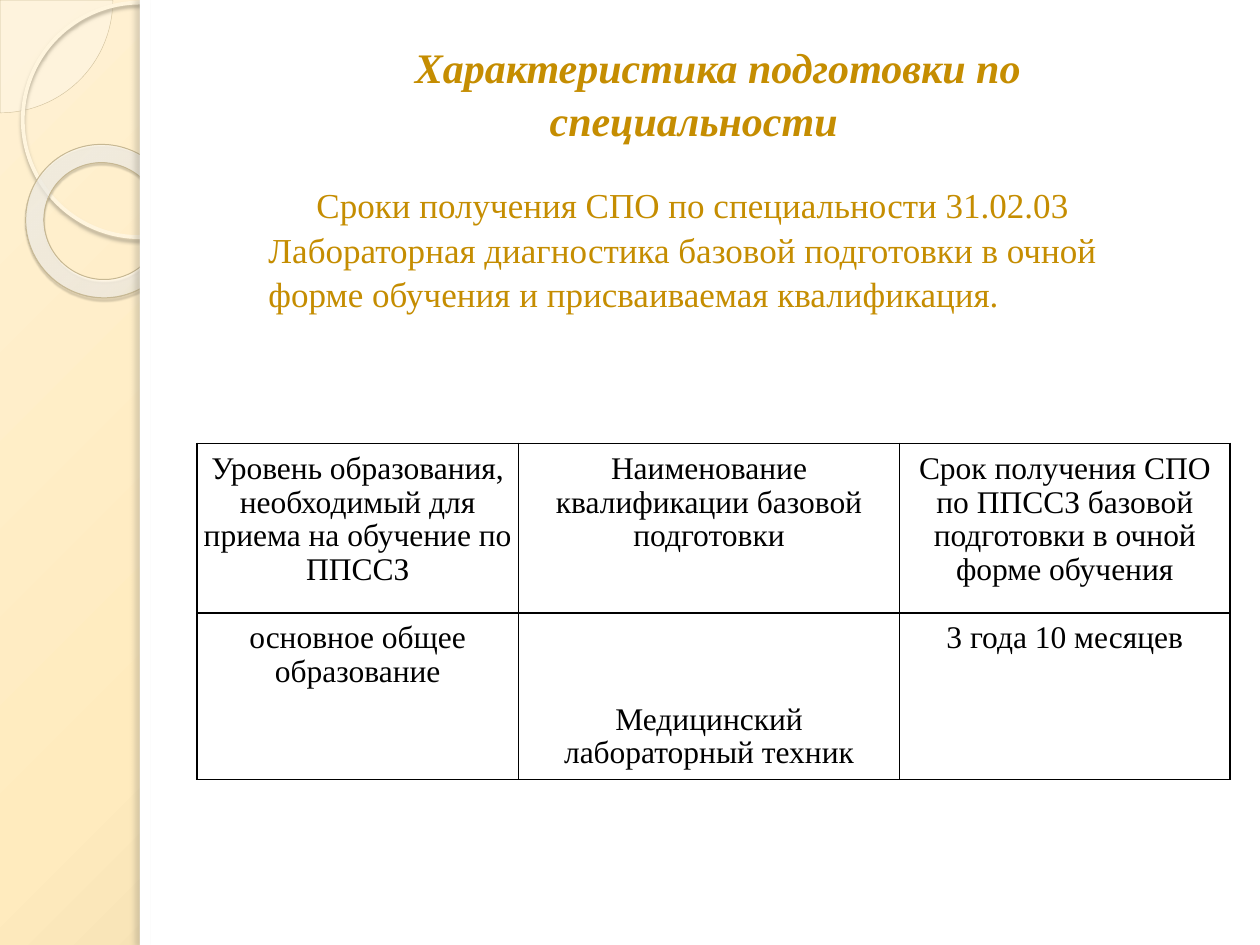
from dataclasses import dataclass
from typing import Optional

from lxml import etree
from pptx import Presentation
from pptx.dml.color import RGBColor
from pptx.enum.shapes import MSO_SHAPE
from pptx.enum.text import MSO_ANCHOR, MSO_AUTO_SIZE, PP_ALIGN
from pptx.oxml import parse_xml
from pptx.oxml.ns import nsdecls, qn
from pptx.util import Pt

TOP, BOTTOM = MSO_ANCHOR.TOP, MSO_ANCHOR.BOTTOM
LEFT, CENTER = PP_ALIGN.LEFT, PP_ALIGN.CENTER


@dataclass(frozen=True)
class Theme:
    font: str = "Times New Roman"
    accent: str = "C58D01"
    ink: str = "000000"
    paper: str = "FFFFFF"
    title_size: int = 24
    body_size: int = 20
    table_size: int = 18


@dataclass(frozen=True)
class Gradient:
    """Circular gradient: stops are (position, colour, opacity) in percent."""
    stops: tuple
    focus: tuple


@dataclass(frozen=True)
class Shadow:
    color: str
    opacity: int
    blur: float
    distance: float
    angle: int


@dataclass(frozen=True)
class Decoration:
    preset: MSO_SHAPE
    box: tuple
    fill: Optional[str] = None
    opacity: int = 100
    gradient: Optional[Gradient] = None
    line: Optional[tuple] = None
    shadow: Optional[Shadow] = None
    adjustments: tuple = ()
    rotation: float = 0


THEME = Theme()
BACKGROUND = Gradient(((0, "FFF1D3", 100), (40, "FFEBBE", 100), (100, "C9B484", 100)),
                      (-24, -20, 124, 120))
RING = Gradient(((0, "FFFCF6", 70), (70, "FFFEFB", 55), (100, "F0D28E", 60)),
                (-408, -50, 508, 150))
DECORATIONS = (
    Decoration(MSO_SHAPE.PIE, (-64.2, -64.2, 128.7, 128.7), fill="FEFAF4", opacity=33,
               line=("D3C39F", 0.25), adjustments=(0, 54.02)),
    Decoration(MSO_SHAPE.OVAL, (13, 1.5, 134, 134), line=("FFF5DE", 2.15),
               shadow=Shadow("B0A68F", 85, 2, 2, 90)),
    Decoration(MSO_SHAPE.DONUT, (14.4, 82.8, 88.6, 87.1), gradient=RING, line=("C7B893", 0.58),
               shadow=Shadow("5A5444", 35, 1, 1.2, 75), adjustments=(0.12,), rotation=38.6),
    Decoration(MSO_SHAPE.RECTANGLE, (80, 0, 640, 540), fill=THEME.paper),
    Decoration(MSO_SHAPE.RECTANGLE, (80, 0, 5.8, 540), fill=THEME.paper,
               shadow=Shadow("736F63", 25, 3, 3, 180)),
)
TITLE = "Характеристика подготовки по специальности"
BODY = ("Сроки получения СПО по специальности 31.02.03 Лабораторная диагностика базовой "
        "подготовки в очной форме обучения и присваиваемая квалификация.")
TABLE_ROWS = (
    ("Уровень образования, необходимый для приема на обучение по ППССЗ",
     "Наименование квалификации базовой подготовки",
     "Срок получения СПО по ППССЗ базовой подготовки в очной форме обучения"),
    ("основное общее образование", "Медицинский лабораторный техник", "3 года 10 месяцев"),
)
COLUMN_WIDTHS = (183.8, 217.8, 188.8)
ROW_HEIGHTS = (97, 95)


def points(values: tuple) -> list:
    return [Pt(value) for value in values]


def set_gradient(container: etree._Element, gradient: Gradient) -> None:
    """Swap the solid fill directly inside the container for the gradient."""
    stops = "".join(
        f'<a:gs pos="{position * 1000}"><a:srgbClr val="{color}">'
        f'<a:alpha val="{opacity * 1000}"/></a:srgbClr></a:gs>'
        for position, color, opacity in gradient.stops)
    left, top, right, bottom = (value * 1000 for value in gradient.focus)
    container.replace(container.find(qn("a:solidFill")), parse_xml(
        f'<a:gradFill {nsdecls("a")} rotWithShape="1"><a:gsLst>{stops}</a:gsLst>'
        f'<a:path path="circle"><a:fillToRect l="{left}" t="{top}" r="{right}" b="{bottom}"/>'
        f'</a:path></a:gradFill>'))


def set_shadow(shape, shadow: Shadow) -> None:
    effects = shape.element.spPr.find(qn("a:effectLst"))
    effects.append(parse_xml(
        f'<a:outerShdw {nsdecls("a")} blurRad="{Pt(shadow.blur)}" dist="{Pt(shadow.distance)}" '
        f'dir="{shadow.angle * 60000}" algn="tl" rotWithShape="0">'
        f'<a:srgbClr val="{shadow.color}"><a:alpha val="{shadow.opacity * 1000}"/></a:srgbClr>'
        f'</a:outerShdw>'))


def draw_decoration(slide, decoration: Decoration) -> None:
    shape = slide.shapes.add_shape(decoration.preset, *points(decoration.box))
    shape.rotation = decoration.rotation
    for index, value in enumerate(decoration.adjustments):
        shape.adjustments[index] = value
    if decoration.fill or decoration.gradient:
        shape.fill.solid()
    else:
        shape.fill.background()
    if decoration.gradient:
        set_gradient(shape.element.spPr, decoration.gradient)
    elif decoration.fill:
        shape.fill.fore_color.rgb = RGBColor.from_string(decoration.fill)
        if decoration.opacity < 100:
            color = shape.element.spPr.find(qn("a:solidFill"))[0]
            etree.SubElement(color, qn("a:alpha")).set("val", str(decoration.opacity * 1000))
    if decoration.line:
        color, width = decoration.line
        shape.line.color.rgb = RGBColor.from_string(color)
        shape.line.width = Pt(width)
    else:
        shape.line.fill.background()
    shape.shadow.inherit = False
    if decoration.shadow:
        set_shadow(shape, decoration.shadow)


def format_paragraph(paragraph, size: int, color: str, alignment: PP_ALIGN,
                     spacing: float, emphasis: bool = False) -> None:
    paragraph.alignment = alignment
    paragraph.line_spacing = spacing
    paragraph.space_before = Pt(0)
    for run in paragraph.runs:
        font = run.font
        font.name, font.size = THEME.font, Pt(size)
        font.bold = font.italic = emphasis
        font.color.rgb = RGBColor.from_string(color)


def fill_placeholder(placeholder, text: str, box: tuple, size: int,
                     alignment: PP_ALIGN, emphasis: bool) -> None:
    """Place the text above the decorations with an indented first line and no bullet."""
    placeholder.element.getparent().append(placeholder.element)
    placeholder.left, placeholder.top, placeholder.width, placeholder.height = points(box)
    frame = placeholder.text_frame
    frame.text = text
    frame.word_wrap = True
    frame.auto_size = MSO_AUTO_SIZE.NONE
    frame.vertical_anchor = TOP
    paragraph = frame.paragraphs[0]
    properties = paragraph._p.get_or_add_pPr()
    properties.set("marL", "0")
    properties.set("indent", str(Pt(27.4)))
    etree.SubElement(properties, qn("a:buNone"))
    format_paragraph(paragraph, size, THEME.accent, alignment, 1.05, emphasis)


def format_cell(cell, text: str, anchor: MSO_ANCHOR) -> None:
    cell.text_frame.text = text
    cell.vertical_anchor = anchor
    cell.margin_left = cell.margin_right = Pt(2.9)
    cell.margin_top = cell.margin_bottom = Pt(5)
    format_paragraph(cell.text_frame.paragraphs[0], THEME.table_size, THEME.ink, CENTER, 0.97)
    properties = cell._tc.get_or_add_tcPr()
    for side in ("lnL", "lnR", "lnT", "lnB"):
        properties.append(parse_xml(
            f'<a:{side} {nsdecls("a")} w="{Pt(1)}"><a:solidFill>'
            f'<a:srgbClr val="{THEME.ink}"/></a:solidFill></a:{side}>'))
    cell.fill.background()


def draw_table(slide) -> None:
    table = slide.shapes.add_table(
        len(ROW_HEIGHTS), len(COLUMN_WIDTHS), Pt(112.5), Pt(253.4),
        Pt(sum(COLUMN_WIDTHS)), Pt(sum(ROW_HEIGHTS))).table
    table.first_row = table.horz_banding = False
    for column, width in zip(table.columns, COLUMN_WIDTHS):
        column.width = Pt(width)
    for row, height, texts in zip(table.rows, ROW_HEIGHTS, TABLE_ROWS):
        row.height = Pt(height)
        for cell, text in zip(row.cells, texts):
            format_cell(cell, text, TOP)
    table.cell(1, 1).vertical_anchor = BOTTOM


def main() -> None:
    presentation = Presentation()
    presentation.slide_width, presentation.slide_height = Pt(720), Pt(540)
    slide = presentation.slides.add_slide(presentation.slide_layouts[1])
    slide.background.fill.solid()
    set_gradient(slide.element.find(".//" + qn("p:bgPr")), BACKGROUND)
    for decoration in DECORATIONS:
        draw_decoration(slide, decoration)
    draw_table(slide)
    title, body = slide.placeholders
    fill_placeholder(title, TITLE, (146.2, 18.7, 500.4, 70), THEME.title_size, CENTER, True)
    fill_placeholder(body, BODY, (146.2, 100.3, 500.4, 80), THEME.body_size, LEFT, False)
    presentation.save("out.pptx")


if __name__ == "__main__":
    main()
